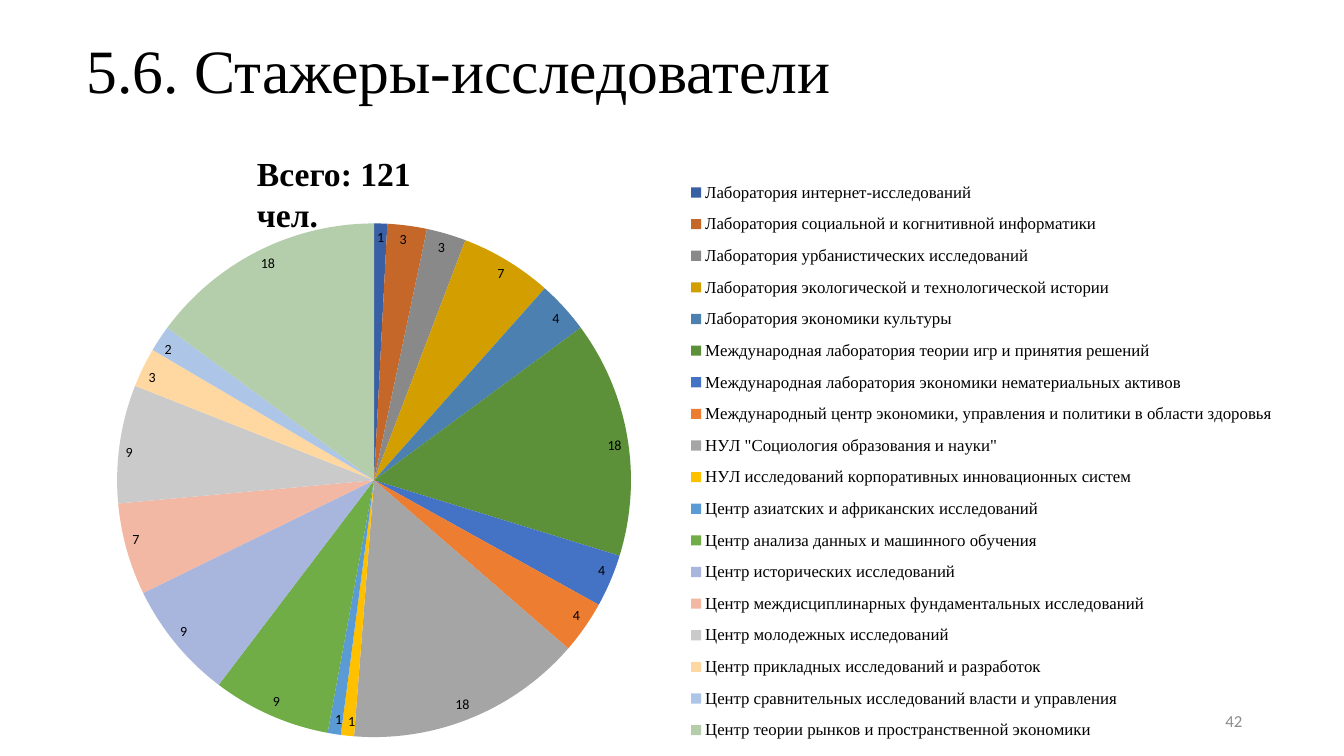
from dataclasses import dataclass

from lxml import etree
from pptx import Presentation
from pptx import util as u
from pptx.chart.data import CategoryChartData
from pptx.dml.color import RGBColor
from pptx.enum import chart as charts, text
from pptx.oxml import ns

SERIF = "Times New Roman"
SANS = "Calibri"
BLACK = RGBColor(0x00, 0x00, 0x00)
GRAY = RGBColor(0x8C, 0x8C, 0x8C)


@dataclass
class Unit:
    name: str
    trainees: int
    color: RGBColor


@dataclass
class Label:
    wording: str
    left: float
    top: float
    width: float
    height: float
    size: int
    font: str = SERIF
    color: RGBColor = BLACK
    bold: bool = False
    align: text.PP_ALIGN = text.PP_ALIGN.LEFT
    anchor: text.MSO_ANCHOR = text.MSO_ANCHOR.TOP


UNITS = [
    Unit("Лаборатория интернет-исследований", 1, RGBColor(0x39, 0x5F, 0xA4)),
    Unit("Лаборатория социальной и когнитивной информатики", 3, RGBColor(0xC6, 0x67, 0x2A)),
    Unit("Лаборатория урбанистических исследований", 3, RGBColor(0x89, 0x89, 0x89)),
    Unit("Лаборатория экологической и технологической истории", 7, RGBColor(0xD3, 0x9F, 0x00)),
    Unit("Лаборатория экономики культуры", 4, RGBColor(0x4B, 0x80, 0xB1)),
    Unit("Международная лаборатория теории игр и принятия решений", 18, RGBColor(0x5C, 0x90, 0x39)),
    Unit("Международная лаборатория экономики нематериальных активов", 4, RGBColor(0x44, 0x72, 0xC4)),
    Unit("Международный центр экономики, управления и политики в области здоровья", 4,
         RGBColor(0xED, 0x7D, 0x31)),
    Unit('НУЛ "Социология образования и науки"', 18, RGBColor(0xA5, 0xA5, 0xA5)),
    Unit("НУЛ исследований корпоративных инновационных систем", 1, RGBColor(0xFF, 0xC0, 0x00)),
    Unit("Центр азиатских и африканских исследований", 1, RGBColor(0x5B, 0x9B, 0xD5)),
    Unit("Центр анализа данных и машинного обучения", 9, RGBColor(0x70, 0xAD, 0x47)),
    Unit("Центр исторических исследований", 9, RGBColor(0xA8, 0xB5, 0xDD)),
    Unit("Центр междисциплинарных фундаментальных исследований", 7, RGBColor(0xF3, 0xB8, 0xA4)),
    Unit("Центр молодежных исследований", 9, RGBColor(0xCA, 0xCA, 0xCA)),
    Unit("Центр прикладных исследований и разработок", 3, RGBColor(0xFF, 0xD8, 0xA1)),
    Unit("Центр сравнительных исследований власти и управления", 2, RGBColor(0xAD, 0xC5, 0xE6)),
    Unit("Центр теории рынков и пространственной экономики", 18, RGBColor(0xB4, 0xCE, 0xAB)),
]

LABELS = [
    Label("5.6. Стажеры-исследователи", 0.76, 0.27, 12, 0.8, 44),
    Label("Всего: 121 чел.", 2.45, 1.47, 2.25, 0.85, 24, bold=True),
    Label("42", 9.42, 6.95, 3, 0.4, 12, SANS, GRAY,
          align=text.PP_ALIGN.RIGHT, anchor=text.MSO_ANCHOR.MIDDLE),
]


def add_label(page, label: Label) -> None:
    box = page.shapes.add_textbox(u.Inches(label.left), u.Inches(label.top),
                                  u.Inches(label.width), u.Inches(label.height))
    frame = box.text_frame
    frame.word_wrap = True
    frame.vertical_anchor = label.anchor
    para = frame.paragraphs[0]
    para.alignment = label.align
    span = para.add_run()
    span.text = label.wording
    span.font.size = u.Pt(label.size)
    span.font.name = label.font
    span.font.bold = label.bold
    span.font.color.rgb = label.color


def make_layout(x: float, y: float, w: float, h: float, inner: bool = False):
    """Manual chart layout, as fractions of the chart's size."""
    layout = etree.Element(ns.qn("c:layout"))
    manual = etree.SubElement(layout, ns.qn("c:manualLayout"))
    settings = {"layoutTarget": "inner"} if inner else {}
    settings |= {"xMode": "edge", "yMode": "edge", "x": x, "y": y, "w": w, "h": h}
    for tag, value in settings.items():
        etree.SubElement(manual, ns.qn(f"c:{tag}")).set("val", str(value))
    return layout


def add_pie(page, units: list[Unit]) -> None:
    data = CategoryChartData()
    data.categories = [unit.name for unit in units]
    data.add_series("Series 1", [unit.trainees for unit in units])
    chart = page.shapes.add_chart(
        charts.XL_CHART_TYPE.PIE, u.Inches(0.54), u.Inches(1.5),
        u.Inches(12.43), u.Inches(6.16), data).chart
    chart.has_title = False
    chart.font.size = u.Pt(10)
    chart.font.name = SANS
    chart.font.color.rgb = BLACK

    # Slices and their values
    plot = chart.plots[0]
    plot.vary_by_categories = True
    for index, unit in enumerate(units):
        slice_format = plot.series[0].points[index].format
        slice_format.fill.solid()
        slice_format.fill.fore_color.rgb = unit.color
        slice_format.line.fill.background()
    plot.has_data_labels = True
    plot.data_labels.show_value = True
    plot.data_labels.show_percentage = False
    plot.data_labels.position = charts.XL_LABEL_POSITION.INSIDE_END

    # Legend
    chart.has_legend = True
    legend = chart.legend
    legend.position = charts.XL_LEGEND_POSITION.RIGHT
    legend.include_in_layout = False
    legend.font.size = u.Pt(12)
    legend.font.name = SERIF
    legend.font.color.rgb = BLACK

    # Places of the pie and the legend
    chart_root = chart.element
    for old in list(chart_root.iter(ns.qn("c:layout"))):
        old.getparent().remove(old)
    area = next(chart_root.iter(ns.qn("c:plotArea")))
    area.insert(0, make_layout(0.05, 0.11, 0.41, 0.94, inner=True))
    side = next(chart_root.iter(ns.qn("c:legendPos")))
    side.addnext(make_layout(0.49, 0.03, 0.5, 0.94))


def main() -> None:
    deck = Presentation()
    deck.slide_width = u.Inches(13.33)
    deck.slide_height = u.Inches(7.5)
    page = deck.slides.add_slide(deck.slide_layouts[6])
    add_pie(page, UNITS)
    for label in LABELS:
        add_label(page, label)
    deck.save("out.pptx")


if __name__ == "__main__":
    main()
